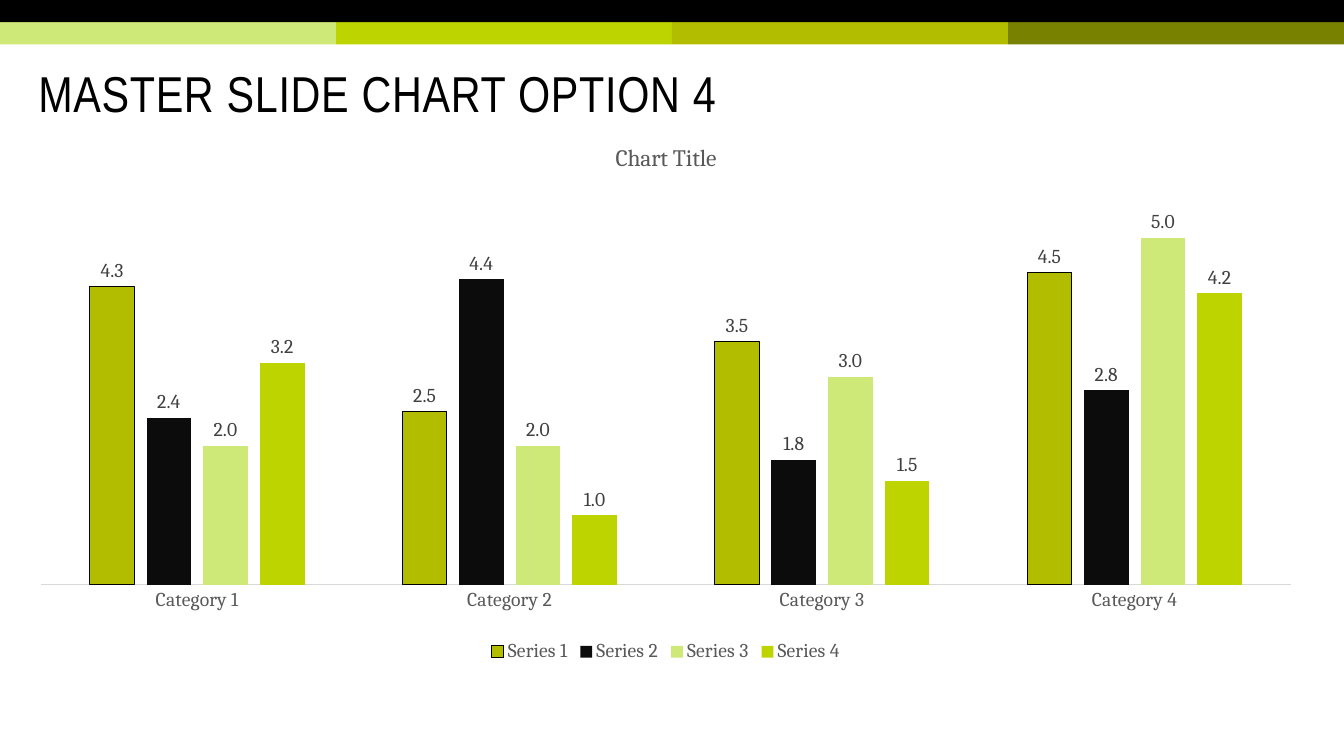
import pptx
import pptx.chart.data
import pptx.dml.color
import pptx.enum.chart
import pptx.enum.shapes
import pptx.enum.text
import pptx.oxml
import pptx.oxml.ns
import pptx.util
from pptx.util import Inches

LIME, GREEN, OLIVE, DARK = "CFE978", "BDD400", "B3BD00", "788200"
BLACK = "000000"


def color(value):
    return pptx.dml.color.RGBColor.from_string(value)


def format_font(font, name="Cambria", size=14, fill=BLACK):
    font.name = name
    font.size = pptx.util.Pt(size)
    font.bold = False
    font.color.rgb = color(fill)


def add_text(tf, text, spacing=None, line_spacing=None, **fmt):
    """Put one formatted run in the first paragraph of a text frame."""
    p = tf.paragraphs[0]
    if line_spacing:
        p.line_spacing = line_spacing
    r = p.add_run()
    r.text = text
    format_font(r.font, **fmt)
    if spacing:
        r._r.get_or_add_rPr().set("spc", str(round(spacing * 100)))


def set_plot_layout(chart, **box):
    """Fix the inner plot area as fractions of the chart."""
    area = chart._chartSpace.chart.plotArea
    for old in area.findall(pptx.oxml.ns.qn("c:layout")):
        area.remove(old)
    modes = '<c:xMode val="edge"/><c:yMode val="edge"/>'
    sizes = "".join(f'<c:{key} val="{value}"/>' for key, value in box.items())
    area.insert(0, pptx.oxml.parse_xml(
        f'<c:layout {pptx.oxml.ns.nsdecls("c")}><c:manualLayout>'
        f'<c:layoutTarget val="inner"/>{modes}{sizes}'
        '</c:manualLayout></c:layout>'))


class Deck:
    """Holds the presentation style and the current slide."""
    left, width = 0.28, 12.65
    label, muted, axis = "404040", "595959", "D9D9D9"

    def __init__(self):
        self.prs = pptx.Presentation()
        self.prs.slide_width = Inches(13.33)
        self.prs.slide_height = Inches(7.5)
        self.s = self.prs.slides.add_slide(self.prs.slide_layouts[5])

    def bar(self, x, y, w, h, fill):
        sp = self.s.shapes.add_shape(
            pptx.enum.shapes.MSO_SHAPE.RECTANGLE,
            Inches(x), Inches(y), Inches(w), Inches(h))
        sp.shadow.inherit = False
        sp.fill.solid()
        sp.fill.fore_color.rgb = color(fill)
        sp.line.fill.background()

    def title(self, text):
        sp = self.s.shapes.title
        sp.left, sp.top = Inches(self.left), Inches(0.47)
        sp.width, sp.height = Inches(self.width), Inches(0.98)
        tf = sp.text_frame
        tf.word_wrap = True
        tf.auto_size = pptx.enum.text.MSO_AUTO_SIZE.NONE
        tf.vertical_anchor = pptx.enum.text.MSO_ANCHOR.MIDDLE
        tf.paragraphs[0].alignment = pptx.enum.text.PP_ALIGN.LEFT
        add_text(tf, text, name="Arial Narrow", size=36,
                 spacing=0.5, line_spacing=0.85)

    def column_chart(self, title, categories, series, fills):
        data = pptx.chart.data.CategoryChartData(number_format="0.0")
        data.categories = categories
        for name, values in series.items():
            data.add_series(name, values)
        chart = self.s.shapes.add_chart(
            pptx.enum.chart.XL_CHART_TYPE.COLUMN_CLUSTERED,
            Inches(self.left), Inches(1.21),
            Inches(self.width), Inches(5.41), data).chart
        format_font(chart.font)
        chart.has_title = True
        add_text(chart.chart_title.text_frame, title,
                 size=16.8, fill=self.muted)
        chart.chart_title.include_in_layout = False

        chart.has_legend = True
        chart.legend.position = pptx.enum.chart.XL_LEGEND_POSITION.BOTTOM
        chart.legend.include_in_layout = False
        format_font(chart.legend.font, fill=self.muted)
        self.format_axes(chart)
        self.format_columns(chart.plots[0], fills)
        set_plot_layout(chart, x=0.01, y=0.085, w=0.98, h=0.764)

    def format_axes(self, chart):
        cat = chart.category_axis
        cat.major_tick_mark = pptx.enum.chart.XL_TICK_MARK.NONE
        cat.format.line.color.rgb = color(self.axis)
        cat.format.line.width = pptx.util.Pt(0.75)
        format_font(cat.tick_labels.font, fill=self.muted)
        val = chart.value_axis
        val.minimum_scale, val.maximum_scale = 0, 6
        val.has_major_gridlines = False
        val.visible = False

    def format_columns(self, plot, fills):
        plot.gap_width, plot.overlap = 219, -27
        plot.vary_by_categories = False
        for ser, fill in zip(plot.series, fills):
            ser.format.fill.solid()
            ser.format.fill.fore_color.rgb = color(fill)
            ser.format.line.fill.background()
            labels = ser.data_labels
            labels.show_value = True
            labels.position = pptx.enum.chart.XL_LABEL_POSITION.OUTSIDE_END
            labels.number_format = "0.0"
            labels.number_format_is_linked = False
            format_font(labels.font, fill=self.label)
        outline = plot.series[0].format.line
        outline.color.rgb = color(BLACK)
        outline.width = pptx.util.Pt(0.75)


def main():
    deck = Deck()
    band, quarter = 0.22, 13.33 / 4
    for i, fill in enumerate((LIME, GREEN, OLIVE, DARK)):
        deck.bar(i * quarter, band, quarter, band, fill)
    deck.bar(0, 0, 13.33, band, BLACK)
    deck.title("MASTER SLIDE CHART OPTION 4")
    deck.column_chart(
        "Chart Title",
        [f"Category {n}" for n in range(1, 5)],
        {"Series 1": (4.3, 2.5, 3.5, 4.5),
         "Series 2": (2.4, 4.4, 1.8, 2.8),
         "Series 3": (2, 2, 3, 5),
         "Series 4": (3.2, 1, 1.5, 4.2)},
        (OLIVE, "0C0C0C", LIME, GREEN))
    deck.prs.save("out.pptx")


if __name__ == "__main__":
    main()
